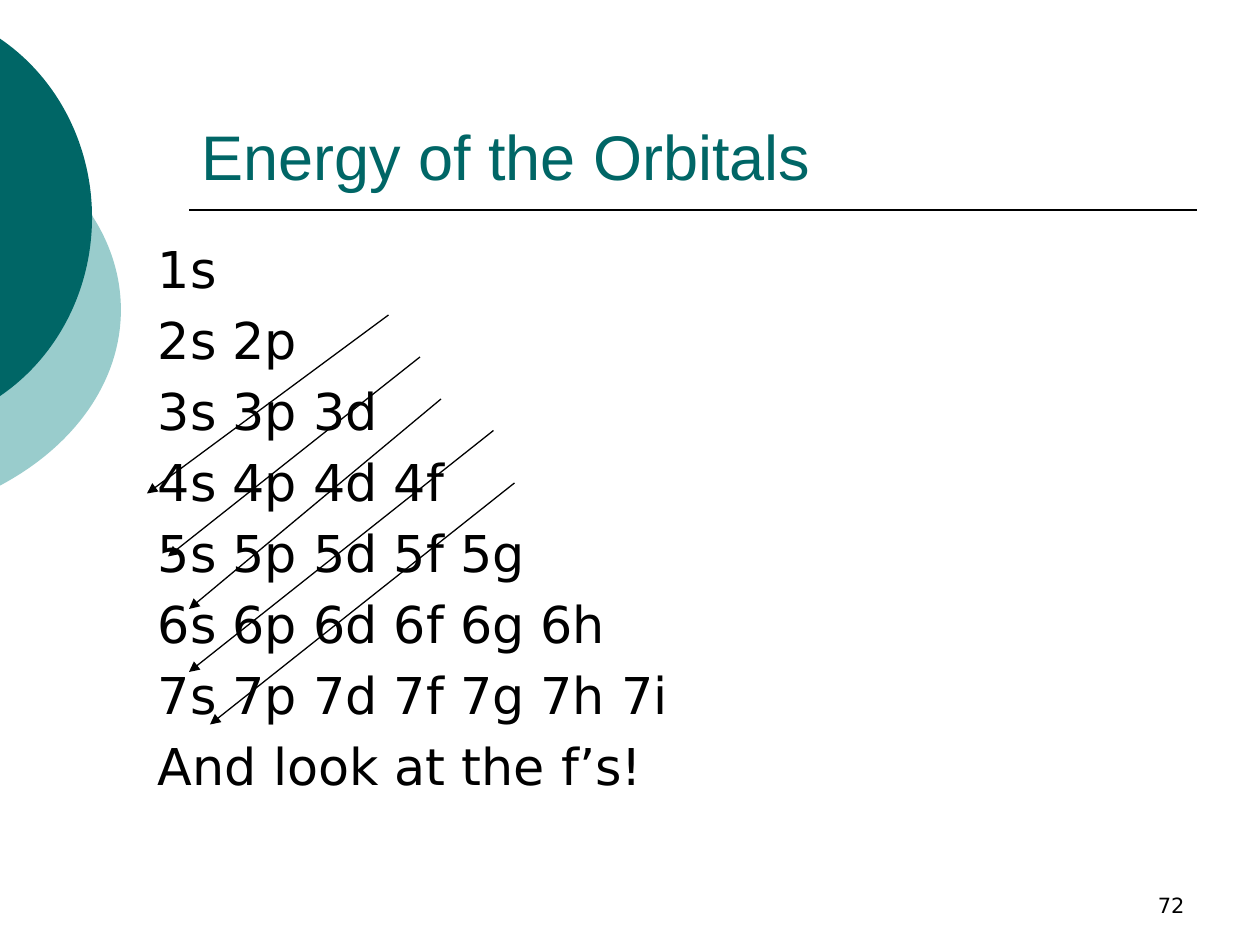
from lxml import etree
from pptx import Presentation
from pptx.dml.color import RGBColor
from pptx.enum import shapes, text
from pptx.oxml import ns
from pptx.util import Pt

HUES = {"dark": "006666", "pale": "99CCCC", "ink": "000000"}
ROWS = [
    "1s",
    "2s 2p",
    "3s 3p 3d",
    "4s 4p 4d 4f",
    "5s 5p 5d 5f 5g",
    "6s 6p 6d 6f 6g 6h",
    "7s 7p 7d 7f 7g 7h 7i",
    "And look at the f’s!",
]
ARROWS = [
    (222, 180, 84, 282),
    (240, 204, 96, 318),
    (252, 228, 108, 348),
    (282, 246, 108, 384),
    (294, 276, 120, 414),
]


def hue(name):
    return RGBColor.from_string(HUES[name])


def place(item, left, top, width, height):
    item.left, item.top = Pt(left), Pt(top)
    item.width, item.height = Pt(width), Pt(height)


def setup(frame, anchor):
    frame.word_wrap = True
    frame.auto_size = text.MSO_AUTO_SIZE.NONE
    frame.vertical_anchor = anchor


def write(para, words, size, face, color, align=text.PP_ALIGN.LEFT):
    para.alignment = align
    run = para.add_run()
    run.text = words
    run.font.size = Pt(size)
    run.font.name = face
    run.font.color.rgb = hue(color)


def bend(shape, frame):
    dx, dy = shape.left - Pt(frame[0]), shape.top - Pt(frame[1])
    place(shape, *frame)
    track = shape._element.find(".//" + ns.qn("a:path"))
    track.set("w", str(shape.width))
    track.set("h", str(shape.height))
    for dot in track.iter(ns.qn("a:pt")):
        dot.set("x", str(int(dot.get("x")) + dx))
        dot.set("y", str(int(dot.get("y")) + dy))
    legs = track.findall(ns.qn("a:lnTo"))
    for first in range(0, len(legs), 3):
        arc = etree.Element(ns.qn("a:cubicBezTo"))
        legs[first].addprevious(arc)
        for leg in legs[first:first + 3]:
            arc.append(leg[0])
            track.remove(leg)


def disc(slide, color, frame, upper):
    mid = upper[-1][1]
    lower = [(x, 2 * mid - y) for x, y in reversed(upper[:-1])]
    dots = [(Pt(x), Pt(y)) for x, y in upper + lower]
    pen = slide.shapes.build_freeform(*dots[0])
    pen.add_line_segments(dots[1:], close=True)
    shape = pen.convert_to_shape()
    bend(shape, frame)
    shape.shadow.inherit = False
    shape.fill.solid()
    shape.fill.fore_color.rgb = hue(color)
    shape.line.fill.background()


def rule(slide, ends, width, tip=False):
    line = slide.shapes.add_connector(shapes.MSO_CONNECTOR.STRAIGHT, *map(Pt, ends))
    line.line.width = Pt(width)
    line.line.color.rgb = hue("ink")
    if tip:
        stroke = line.line._get_or_add_ln()
        etree.SubElement(stroke, ns.qn("a:tailEnd"), type="triangle")
    etree.SubElement(line._element.spPr, ns.qn("a:effectLst"))


def title(slide):
    box = slide.shapes.title
    place(box, 108, 24, 576, 90)
    setup(box.text_frame, text.MSO_ANCHOR.BOTTOM)
    write(box.text_frame.paragraphs[0], "Energy of the Orbitals", 36, "Arial", "dark")


def body(slide):
    box = slide.placeholders[1]
    place(box, 83, 132, 630, 324)
    frame = box.text_frame
    setup(frame, text.MSO_ANCHOR.TOP)
    for spot, row in enumerate(ROWS):
        para = frame.add_paragraph() if spot else frame.paragraphs[0]
        para.space_before = Pt(5.8)
        props = para._p.get_or_add_pPr()
        props.set("marL", str(Pt(27)))
        props.set("indent", str(-Pt(27)))
        etree.SubElement(props, ns.qn("a:buNone"))
        write(para, row, 29, "DejaVu Sans", "ink")


def number(slide):
    box = slide.shapes.add_textbox(Pt(516), Pt(492), Pt(168), Pt(36))
    setup(box.text_frame, text.MSO_ANCHOR.BOTTOM)
    write(box.text_frame.paragraphs[0], "72", 12, "DejaVu Sans", "ink", text.PP_ALIGN.RIGHT)


def main():
    deck = Presentation()
    deck.slide_width, deck.slide_height = Pt(720), Pt(540)
    slide = deck.slides.add_slide(deck.slide_layouts[1])
    disc(slide, "pale", (-255, 54, 324, 246),
         [(-0.7, 76.3), (43.2, 99.4), (69.1, 136.8), (69.1, 177.1)])
    disc(slide, "dark", (-191, 0, 243.5, 248.5),
         [(-0.7, 21.6), (33.1, 44.3), (52.6, 83.2), (52.6, 124.2)])
    rule(slide, (108, 120, 684, 120), 1)
    title(slide)
    body(slide)
    for ends in ARROWS:
        rule(slide, ends, 0.75, tip=True)
    number(slide)
    deck.save("out.pptx")


if __name__ == "__main__":
    main()
